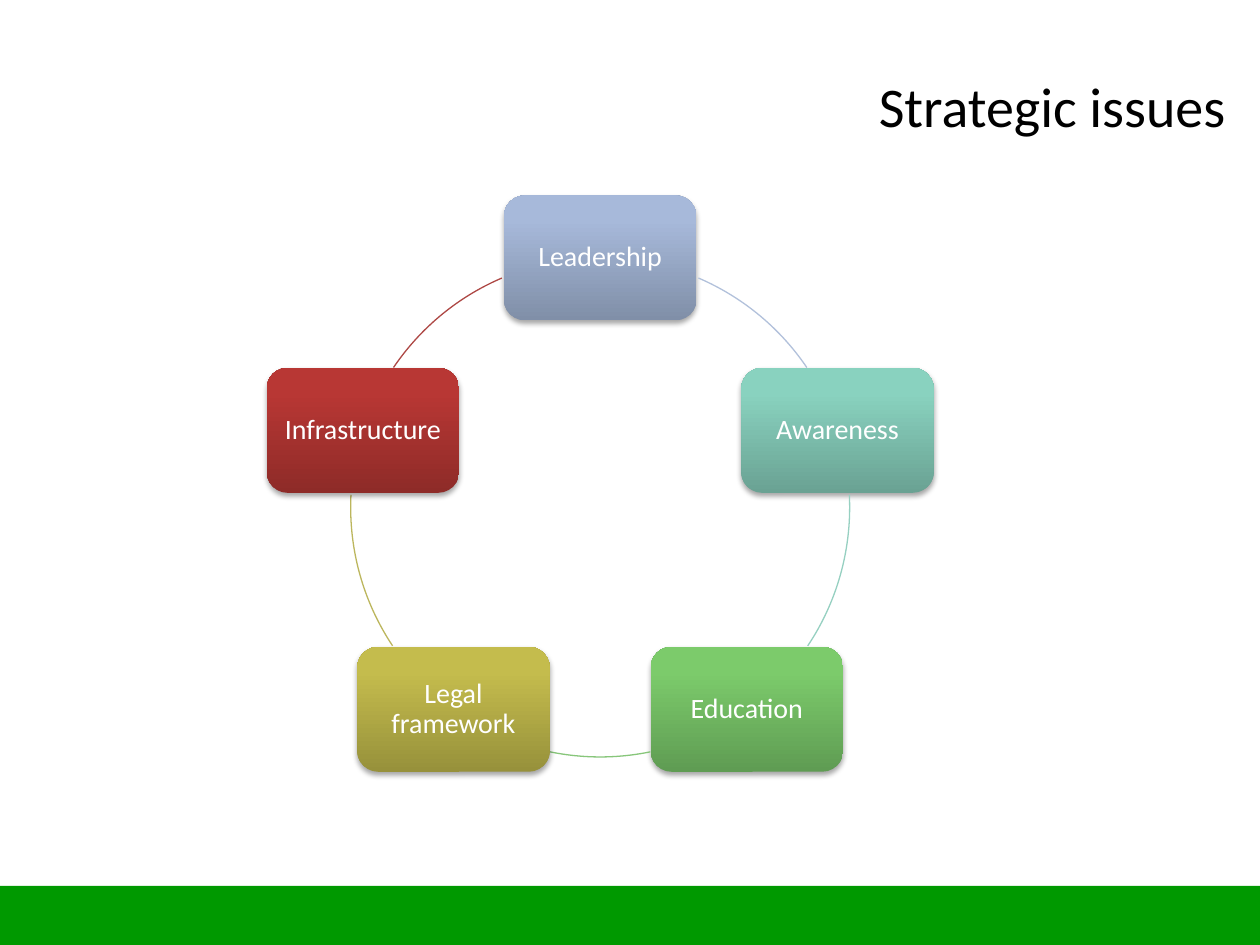
from copy import deepcopy
from dataclasses import dataclass
from math import cos, radians, sin

from lxml import etree
from pptx import Presentation
from pptx.dml import color as dml
from pptx.enum import shapes, text
from pptx.oxml import ns
from pptx.util import Cm, Pt

COLORS = {
    "bar": "009900", "title": "000000", "label": "FFFFFF", "shadow": "000000",
    "blue low": "808FA8", "blue mid": "A7B9DA", "blue top": "A6BADC", "blue arc": "B2C1DB",
    "teal low": "6AA293", "teal mid": "89D2BF", "teal top": "89D4C0", "teal arc": "96D0C1",
    "green low": "5F9C53", "green mid": "7CCB6B", "green top": "7BCD6A", "green arc": "87C67A",
    "olive low": "97913B", "olive mid": "C4BC4D", "olive top": "C7BF4B", "olive arc": "BCB65D",
    "red low": "8E2B28", "red mid": "B83734", "red top": "BB3531", "red arc": "AE4845",
}
MID_X, MID_Y, RADIUS = 12.1, 10.23, 5.03  # ring, in cm
BOX_W, BOX_H = 3.88, 2.52


@dataclass
class Issue:
    name: str
    hue: str
    start: float  # arc to the next issue, degrees clockwise from the right
    end: float


ISSUES = [
    Issue("Leadership", "blue", 293.2, 325.9),
    Issue("Awareness", "teal", 357.1, 33.7),
    Issue("Education", "green", 78.4, 101.6),
    Issue("Legal framework", "olive", 146.3, 182.9),
    Issue("Infrastructure", "red", 214.1, 246.8),
]


def rgb(key: str) -> dml.RGBColor:
    return dml.RGBColor.from_string(COLORS[key])


def write(shape, words: str, *, size: float, color: str, align, inset: tuple[float, float],
          spacing: float = 1.0) -> None:
    frame = shape.text_frame
    frame.word_wrap = True
    frame.auto_size = text.MSO_AUTO_SIZE.NONE
    frame.vertical_anchor = text.MSO_ANCHOR.MIDDLE
    frame.margin_left = frame.margin_right = Cm(inset[0])
    frame.margin_top = frame.margin_bottom = Cm(inset[1])
    frame.text = words
    para = frame.paragraphs[0]
    para.alignment = align
    para.line_spacing = spacing
    para.font.name = "Calibri"
    para.font.size = Pt(size)
    para.font.color.rgb = rgb(color)


def add_shape(slide, kind, left: float, top: float, width: float, height: float):
    shape = slide.shapes.add_shape(kind, Cm(left), Cm(top), Cm(width), Cm(height))
    shape.shadow.inherit = False
    return shape


def shade(shape, hue: str) -> None:
    shape.fill.gradient()
    shape.fill.gradient_angle = 90
    stops = shape._element.spPr.find(".//" + ns.qn("a:gsLst"))
    stops.append(deepcopy(stops[0]))
    tones = (("low", 0), ("mid", 0.8), ("top", 1))
    for stop, (tone, place) in zip(shape.fill.gradient_stops, tones):
        stop.color.rgb = rgb(f"{hue} {tone}")
        stop.position = place


def cast(shape) -> None:
    effects = shape._element.spPr.find(ns.qn("a:effectLst"))
    shadow = etree.SubElement(effects, ns.qn("a:outerShdw"), blurRad=str(Pt(3.1)),
                              dist=str(Pt(1.8)), dir="5400000", rotWithShape="0")
    color = etree.SubElement(shadow, ns.qn("a:srgbClr"), val=COLORS["shadow"])
    etree.SubElement(color, ns.qn("a:alpha"), val="35000")


def add_box(slide, issue: Issue, angle: float) -> None:
    x = MID_X + RADIUS * cos(radians(angle))
    y = MID_Y + RADIUS * sin(radians(angle))
    box = add_shape(slide, shapes.MSO_SHAPE.ROUNDED_RECTANGLE,
                    x - BOX_W / 2, y - BOX_H / 2, BOX_W, BOX_H)
    box.line.fill.background()
    shade(box, issue.hue)
    cast(box)
    write(box, issue.name, size=16, color="label", align=text.PP_ALIGN.CENTER,
          inset=(0.17, 0.17), spacing=0.9)


def add_arc(slide, issue: Issue) -> None:
    arc = add_shape(slide, shapes.MSO_SHAPE.ARC, MID_X - RADIUS, MID_Y - RADIUS,
                    2 * RADIUS, 2 * RADIUS)
    # An angle is stored in 1/60000 degree, an adjustment in 1/100000
    arc.adjustments[0] = issue.start * 0.6
    arc.adjustments[1] = issue.end * 0.6
    arc.fill.background()
    arc.line.color.rgb = rgb(f"{issue.hue} arc")
    arc.line.width = Pt(0.75)


def main() -> None:
    deck = Presentation()
    deck.slide_width, deck.slide_height = Cm(25.4), Cm(19.05)
    slide = deck.slides.add_slide(deck.slide_layouts[5])

    # Bottom bar
    bar = add_shape(slide, shapes.MSO_SHAPE.RECTANGLE, 0, 17.86, 25.4, 1.19)
    bar.fill.solid()
    bar.fill.fore_color.rgb = rgb("bar")
    bar.line.fill.background()

    # Title
    title = slide.shapes.title
    title.left, title.top, title.width, title.height = Cm(8.74), Cm(0.97), Cm(16.13), Cm(2.29)
    write(title, "Strategic issues", size=32, color="title",
          align=text.PP_ALIGN.RIGHT, inset=(0.16, 0.13))

    # Ring of issues, clockwise from the top
    for i, issue in enumerate(ISSUES):
        add_box(slide, issue, -90 + i * 360 / len(ISSUES))
        add_arc(slide, issue)

    deck.save("out.pptx")


if __name__ == "__main__":
    main()
